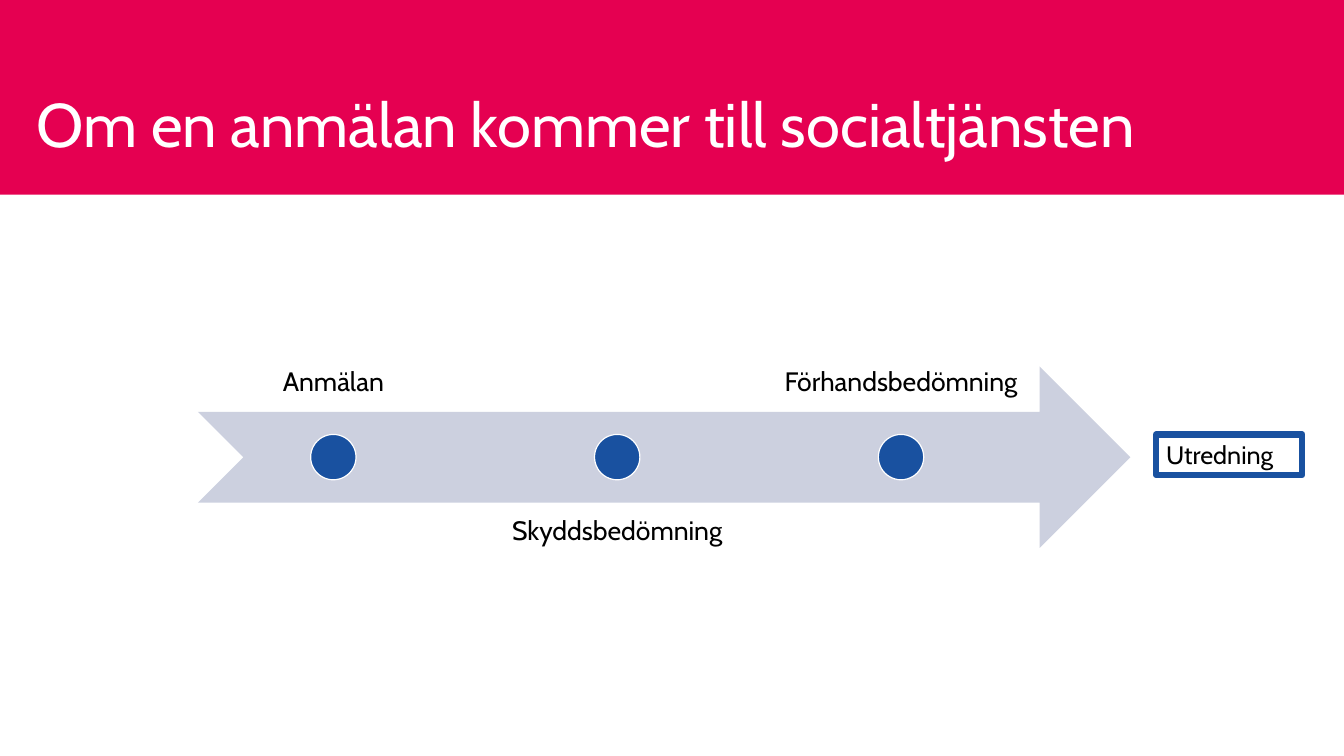
import pptx
import pptx.dml.color
import pptx.enum.shapes
import pptx.enum.text
import pptx.oxml.ns
import pptx.util
from lxml import etree

Pt = pptx.util.Pt
SHAPE = pptx.enum.shapes.MSO_SHAPE
ANCHOR = pptx.enum.text.MSO_ANCHOR
ALIGN = pptx.enum.text.PP_ALIGN
qn = pptx.oxml.ns.qn


def rgb(hex_string):
    return pptx.dml.color.RGBColor.from_string(hex_string)


class Deck:
    FONT = "Cabin"
    PINK, BLUE, GREY = "E50051", "1951A0", "CCD0DF"
    WHITE, BLACK = "FFFFFF", "000000"

    def __init__(self):
        self.prs = pptx.Presentation()
        self.prs.slide_width, self.prs.slide_height = Pt(960), Pt(540)
        self.s = self.prs.slides.add_slide(self.prs.slide_layouts[5])

    def add_text(self, sp, text, size, color, align=ALIGN.LEFT,
                 anchor=ANCHOR.TOP, spacing=1.0, insets=(7.2, 3.6)):
        """Fill a shape with one paragraph; insets are (horizontal, vertical)."""
        tf = sp.text_frame
        tf.word_wrap = True
        tf.auto_size = pptx.enum.text.MSO_AUTO_SIZE.NONE
        tf.vertical_anchor = anchor
        tf.margin_left = tf.margin_right = Pt(insets[0])
        tf.margin_top = tf.margin_bottom = Pt(insets[1])
        p = tf.paragraphs[0]
        p.alignment = align
        p.line_spacing = spacing
        r = p.add_run()
        r.text = text
        r.font.name = self.FONT
        r.font.size = Pt(size)
        r.font.color.rgb = rgb(color)

    def title(self, text, left, top, width, height):
        sp = self.s.shapes.title
        sp.left, sp.top, sp.width, sp.height = map(Pt, (left, top, width, height))
        self.add_text(sp, text, 44, self.WHITE, anchor=ANCHOR.BOTTOM,
                      spacing=1.2, insets=(0, 0))

    def shape(self, kind, left, top, width, height, fill, line=None, weight=0):
        sp = self.s.shapes.add_shape(kind, *map(Pt, (left, top, width, height)))
        sp.shadow.inherit = False
        sp.fill.solid()
        sp.fill.fore_color.rgb = rgb(fill)
        if line:
            sp.line.color.rgb = rgb(line)
            sp.line.width = Pt(weight)
            etree.SubElement(sp.element.spPr.find(qn("a:ln")), qn("a:round"))
        else:
            sp.line.fill.background()
        return sp

    def band(self, height):
        """Place the coloured band behind the title."""
        sp = self.shape(SHAPE.RECTANGLE, 0, 0, 960, height, self.PINK)
        self.s.shapes.title.element.addprevious(sp.element)

    def label(self, text, left, top, width, height, anchor):
        sp = self.s.shapes.add_textbox(*map(Pt, (left, top, width, height)))
        self.add_text(sp, text, 19, self.BLACK, ALIGN.CENTER, anchor, 0.9,
                      (10.8, 10.8))


def main():
    deck = Deck()
    deck.band(139)
    deck.title("Om en anmälan kommer till socialtjänsten", 26, 31, 800, 83.5)
    deck.shape(SHAPE.NOTCHED_RIGHT_ARROW, 141.4, 261.8, 666, 129.6, deck.GREY)

    steps = ["Anmälan", "Skyddsbedömning", "Förhandsbedömning"]
    label_width, dot, middle = 193, 32.4, 326.5
    for i, step in enumerate(steps):
        center = 238.1 + i * 202.75
        top, anchor = (358.6, ANCHOR.TOP) if i % 2 else (164.9, ANCHOR.BOTTOM)
        deck.label(step, center - label_width / 2, top, label_width, 129.6, anchor)
        deck.shape(SHAPE.OVAL, center - dot / 2, middle - dot / 2, dot, dot,
                   deck.BLUE, deck.WHITE, 0.85)

    result = deck.shape(SHAPE.RECTANGLE, 825.8, 310.3, 104.4, 29,
                        deck.WHITE, deck.BLUE, 4.5)
    deck.add_text(result, "Utredning", 18, deck.BLACK)
    deck.prs.save("out.pptx")


if __name__ == "__main__":
    main()
